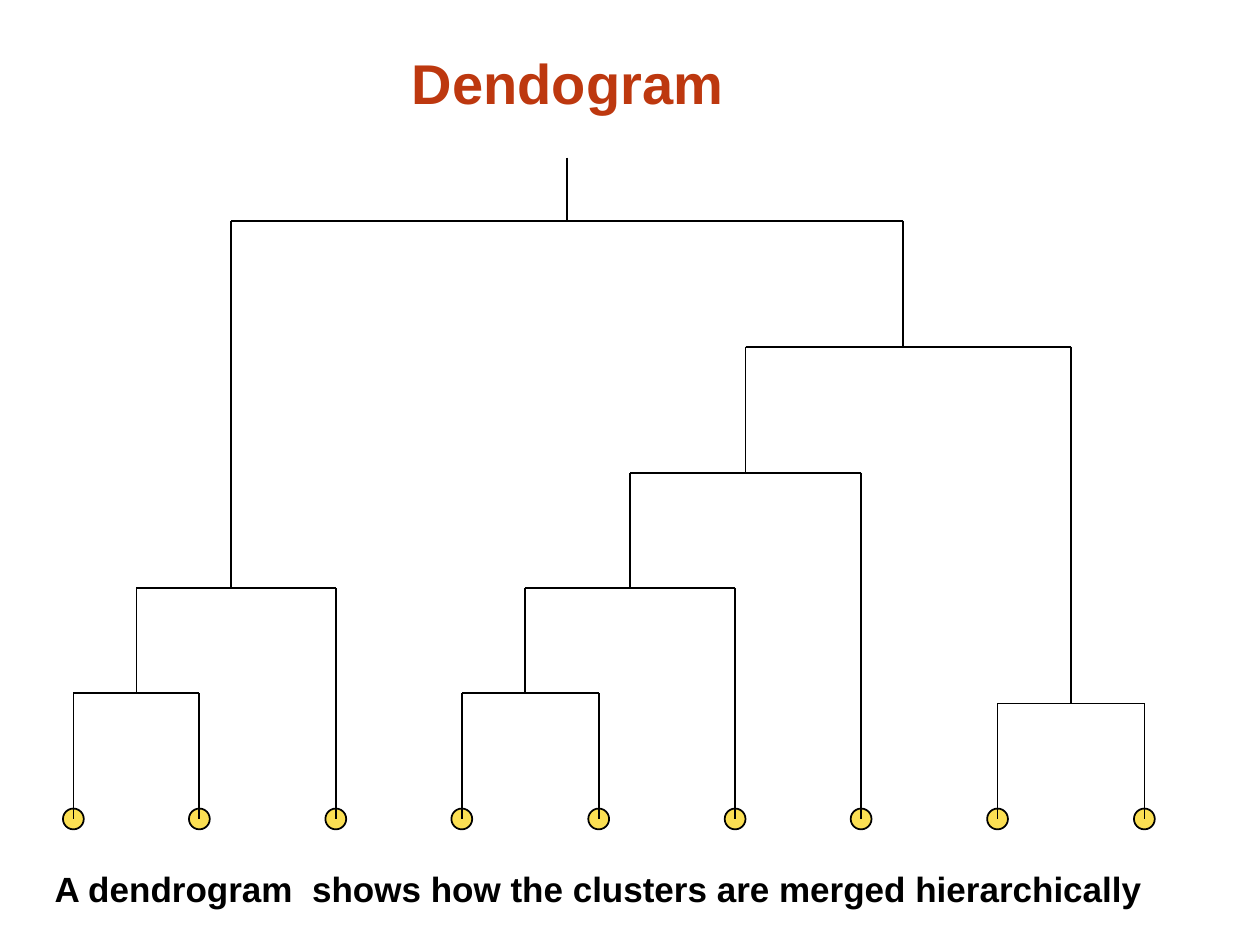
"""Build a slide with a dendrogram of nine items merged step by step."""
from lxml.etree import SubElement
from pptx import Presentation
from pptx.dml.color import RGBColor
from pptx.enum.shapes import MSO_CONNECTOR, MSO_SHAPE
from pptx.enum.text import MSO_ANCHOR, MSO_AUTO_SIZE, PP_ALIGN
from pptx.oxml.ns import qn
from pptx.util import Cm, Pt

TITLE = "Dendogram"
CAPTION = "A dendrogram  shows how the clusters are merged hierarchically"

RUST = RGBColor(0xBD, 0x38, 0x0F)
YELLOW = RGBColor(0xFB, 0xDF, 0x53)
BLACK = RGBColor(0, 0, 0)

LEAF_Y = 16.51
LEAF_SIZE = 0.42
ROOT_TOP = 3.18
LEAVES = {"a": 1.48, "b": 4.02, "c": 6.77, "d": 9.31, "e": 12.07,
          "f": 14.82, "g": 17.36, "h": 20.11, "i": 23.07}
# cluster, left child, right child, stem x, bar y
MERGES = [
    ("ab", "a", "b", 2.75, 13.97),
    ("de", "d", "e", 10.58, 13.97),
    ("hi", "h", "i", 21.59, 14.18),
    ("abc", "ab", "c", 4.66, 11.85),
    ("def", "de", "f", 12.7, 11.85),
    ("defg", "def", "g", 15.03, 9.53),
    ("defghi", "defg", "hi", 18.2, 6.99),
    ("all", "abc", "defghi", 11.43, 4.45),
]


def add_line(slide, x1, y1, x2, y2):
    line = slide.shapes.add_connector(
        MSO_CONNECTOR.STRAIGHT, Cm(x1), Cm(y1), Cm(x2), Cm(y2))
    line.line.color.rgb = BLACK
    line.line.width = Pt(1)
    SubElement(line._element.spPr, qn("a:effectLst"))


def add_leaf(slide, x):
    corner = Cm(x - LEAF_SIZE / 2), Cm(LEAF_Y - LEAF_SIZE / 2)
    leaf = slide.shapes.add_shape(
        MSO_SHAPE.OVAL, *corner, Cm(LEAF_SIZE), Cm(LEAF_SIZE))
    leaf.shadow.inherit = False
    leaf.fill.solid()
    leaf.fill.fore_color.rgb = YELLOW
    leaf.line.color.rgb = BLACK
    leaf.line.width = Pt(1)


def set_text(box, text, size, color, wrap):
    frame = box.text_frame
    frame.text = text
    frame.word_wrap = wrap
    frame.auto_size = MSO_AUTO_SIZE.SHAPE_TO_FIT_TEXT
    frame.vertical_anchor = MSO_ANCHOR.TOP
    paragraph = frame.paragraphs[0]
    paragraph.alignment = PP_ALIGN.LEFT
    font = paragraph.runs[0].font
    font.name = "Arial"
    font.size = Pt(size)
    font.bold = True
    font.color.rgb = color


def main():
    deck = Presentation()
    deck.slide_width, deck.slide_height = Cm(25.4), Cm(19.05)
    slide = deck.slides.add_slide(deck.slide_layouts[5])

    title = slide.shapes.title
    title.left, title.top = Cm(8.05), Cm(0.85)
    title.width, title.height = Cm(6.83), Cm(1.63)
    set_text(title, TITLE, 32, RUST, False)

    for x in LEAVES.values():
        add_leaf(slide, x)

    tops = {leaf: (x, LEAF_Y) for leaf, x in LEAVES.items()}
    for cluster, left, right, stem_x, bar_y in MERGES:
        for child in (left, right):
            x, y = tops[child]
            add_line(slide, x, bar_y, x, y)
        add_line(slide, tops[left][0], bar_y, tops[right][0], bar_y)
        tops[cluster] = stem_x, bar_y
    root_x, root_y = tops["all"]
    add_line(slide, root_x, ROOT_TOP, root_x, root_y)

    caption = slide.shapes.add_textbox(Cm(0.85), Cm(17.36), Cm(23.28), Cm(1.11))
    set_text(caption, CAPTION, 20, BLACK, True)

    deck.save("out.pptx")


if __name__ == "__main__":
    main()
